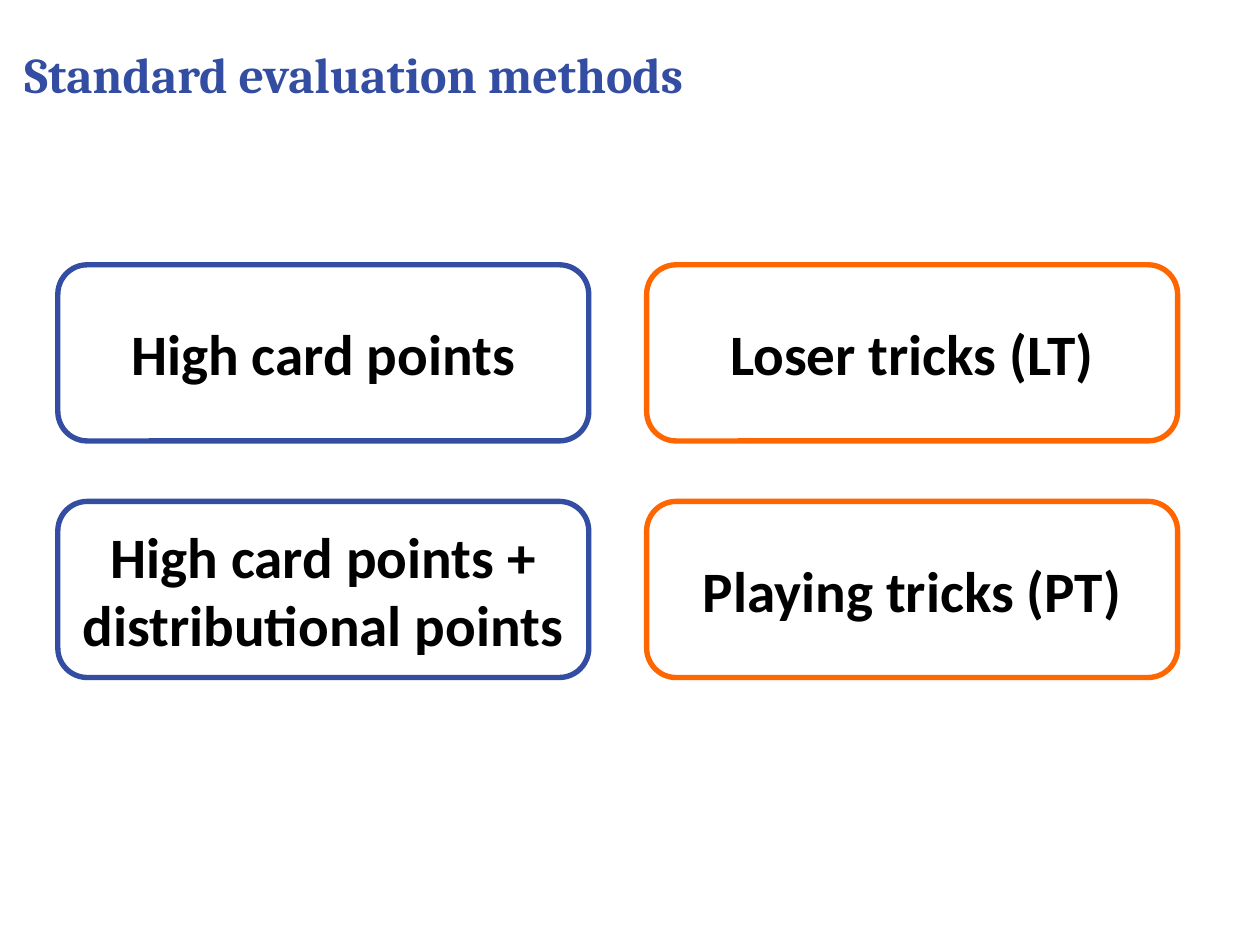
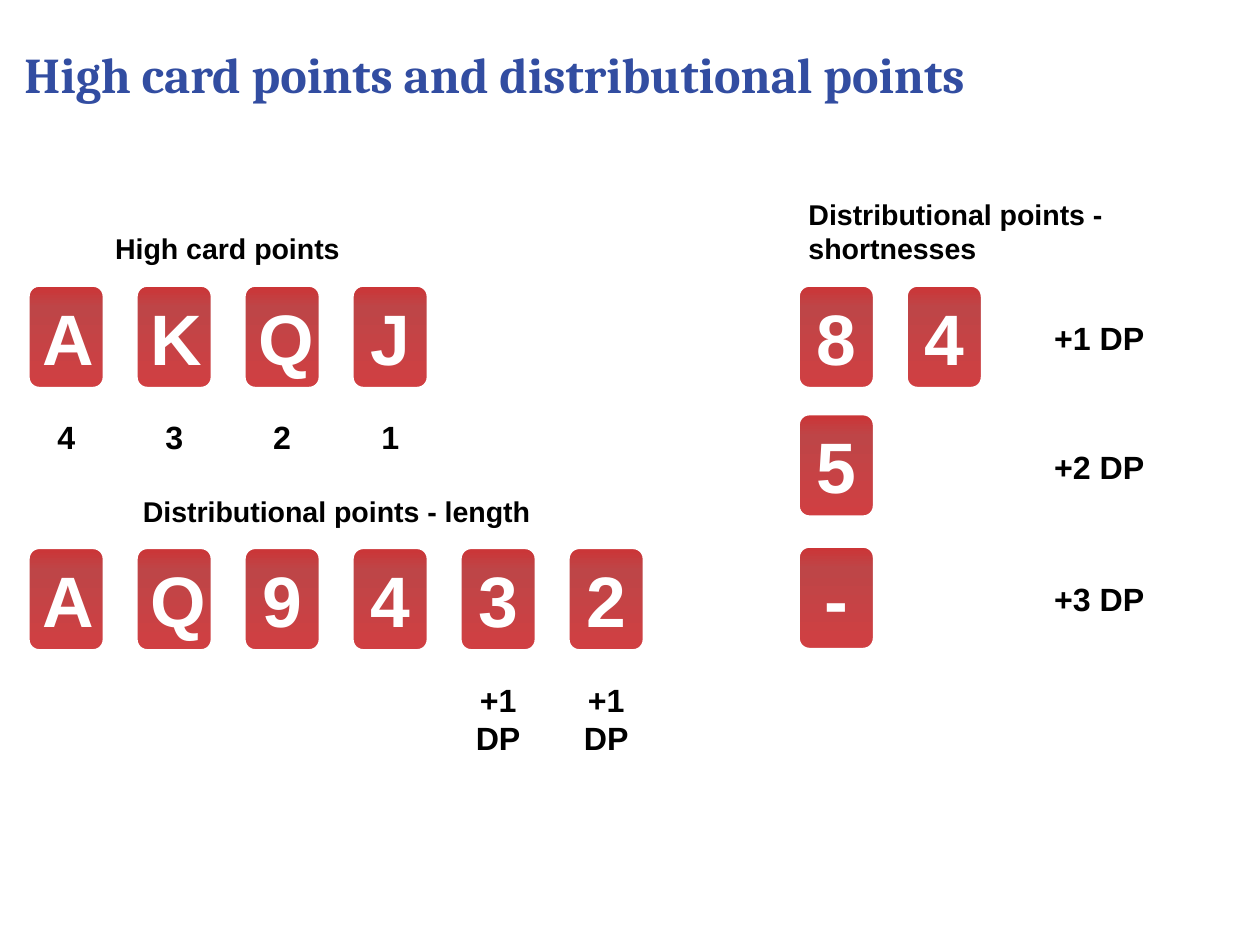
import copy
import pptx
import pptx.dml.color
import pptx.enum.shapes
import pptx.enum.text
import pptx.oxml.ns
import pptx.util

Align = pptx.enum.text.PP_ALIGN
Anchor = pptx.enum.text.MSO_ANCHOR
Size = pptx.enum.text.MSO_AUTO_SIZE
Round = pptx.enum.shapes.MSO_SHAPE.ROUNDED_RECTANGLE

WIDE, HIGH = 98, 73.5  # grid columns and rows
CELL = pptx.util.Inches(0.1)
BLUE, ORANGE, BLACK, WHITE = "324DA1", "FF6600", "000000", "FFFFFF"
RED = [(0, "CE3234"), (0.23, "BE4547"), (0.97, "D03F42")]


def tint(code):
    return pptx.dml.color.RGBColor.from_string(code)


def cells(*sides):
    return [round(side * CELL) for side in sides]


class Deck:
    def __init__(self):
        self.prs = pptx.Presentation()
        self.prs.slide_width, self.prs.slide_height = cells(WIDE, HIGH)
        self.slide = None

    def words(self, shape, text, size, color, font="Arial", align=Align.CENTER,
              anchor=Anchor.MIDDLE, inset=None):
        """Put one styled line of text in a shape."""
        frame = shape.text_frame
        frame.word_wrap = True
        frame.vertical_anchor = anchor
        if inset is not None:
            frame.margin_left = frame.margin_right = inset
            frame.margin_top = frame.margin_bottom = inset
        para = frame.paragraphs[0]
        para.alignment = align
        run = para.add_run()
        run.text = text
        run.font.name = font
        run.font.size = pptx.util.Pt(size)
        run.font.bold = True
        run.font.color.rgb = tint(color)

    def page(self, title):
        """Start a slide with its title."""
        self.slide = self.prs.slides.add_slide(self.prs.slide_layouts[5])
        head = self.slide.shapes.title
        head.left, head.top, head.width, head.height = cells(1.9, 3.4, 94.3, 4.7)
        self.words(head, title, 28, BLUE, "Cambria", Align.LEFT, inset=0)
        head.text_frame.auto_size = Size.SHAPE_TO_FIT_TEXT

    def block(self, col, row, wide, high, line, weight):
        """Add a rounded rectangle with an outline."""
        shape = self.slide.shapes.add_shape(Round, *cells(col, row, wide, high))
        shape.shadow.inherit = False
        shape.line.color.rgb = tint(line)
        shape.line.width = pptx.util.Pt(weight)
        return shape

    def panel(self, col, row, text, line):
        shape = self.block(col, row, 41.3, 13.7, line, 3)
        shape.fill.background()
        self.words(shape, text, 32, BLACK, "Calibri", inset=CELL * 4 // 5)

    def card(self, col, row, face):
        shape = self.block(col, row, 6.3, 8.4, WHITE, 4.5)
        fill = shape.fill
        fill.gradient()
        fill.gradient_angle = 270
        stops = shape._element.spPr.find(".//" + pptx.oxml.ns.qn("a:gsLst"))
        stops.append(copy.deepcopy(stops[0]))
        for stop, (place, color) in zip(fill.gradient_stops, RED):
            stop.position = place
            stop.color.rgb = tint(color)
        self.words(shape, face, 40, WHITE)

    def label(self, col, row, wide, high, text, size=18, align=Align.CENTER):
        box = self.slide.shapes.add_textbox(*cells(col, row, wide, high))
        self.words(box, text, size, BLACK, align=align, anchor=Anchor.TOP)
        box.text_frame.auto_size = Size.SHAPE_TO_FIT_TEXT

    def hand(self, left, row, faces, notes=(), high=4):
        """Lay out a row of cards, with a note under each."""
        step = 8.4
        for i, face in enumerate(faces):
            self.card(left + i * step, row, face)
        for i, note in enumerate(notes):
            if note:
                self.label(left + i * step, row + 10, 6.3, high, note)


def main():
    deck = Deck()

    deck.page("Standard evaluation methods")
    panels = [
        (BLUE, ["High card points", "High card points + distributional points"]),
        (ORANGE, ["Loser tricks (LT)", "Playing tricks (PT)"]),
    ]
    for i, (line, names) in enumerate(panels):
        for j, name in enumerate(names):
            deck.panel(4.5 + i * 45.8, 20.6 + j * 18.4, name, line)

    deck.page("High card points and distributional points")
    left, right = 2, 61.9
    deck.label(left, 17.5, 31.4, 3.7, "High card points", 16)
    deck.hand(left, 22, "AKQJ", "4321")
    deck.label(left, 37.9, 48.4, 3.7, "Distributional points - length", 16)
    deck.hand(left, 42.4, "AQ9432", [""] * 4 + ["+1 DP"] * 2, 7.1)
    deck.label(right, 14.8, 31.4, 6.4, "Distributional points - shortnesses", 16,
               Align.LEFT)
    shorts = [(22, "84"), (32, "5"), (42.3, "-")]
    for points, (row, faces) in enumerate(shorts, 1):
        deck.hand(right, row, faces)
        deck.label(80, row + 2.3, 11, 4, f"+{points} DP")

    deck.prs.save("out.pptx")


if __name__ == "__main__":
    main()
